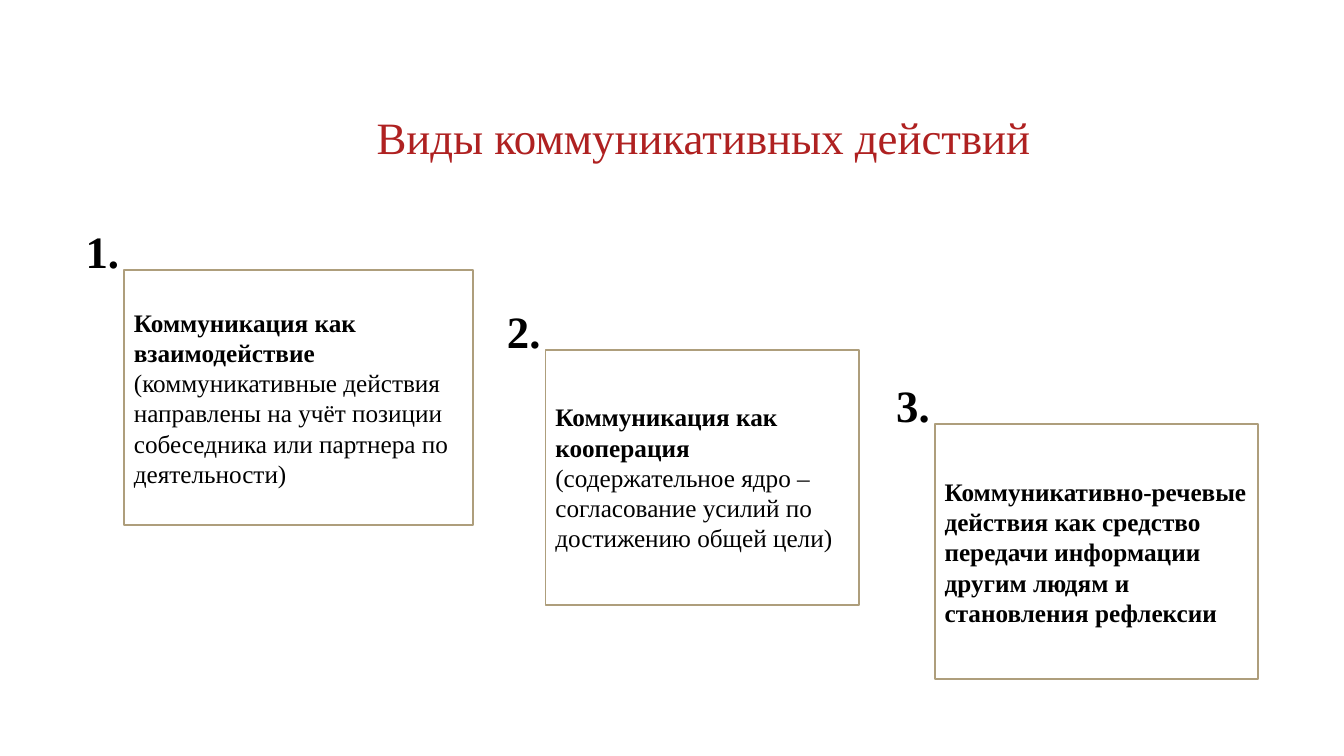
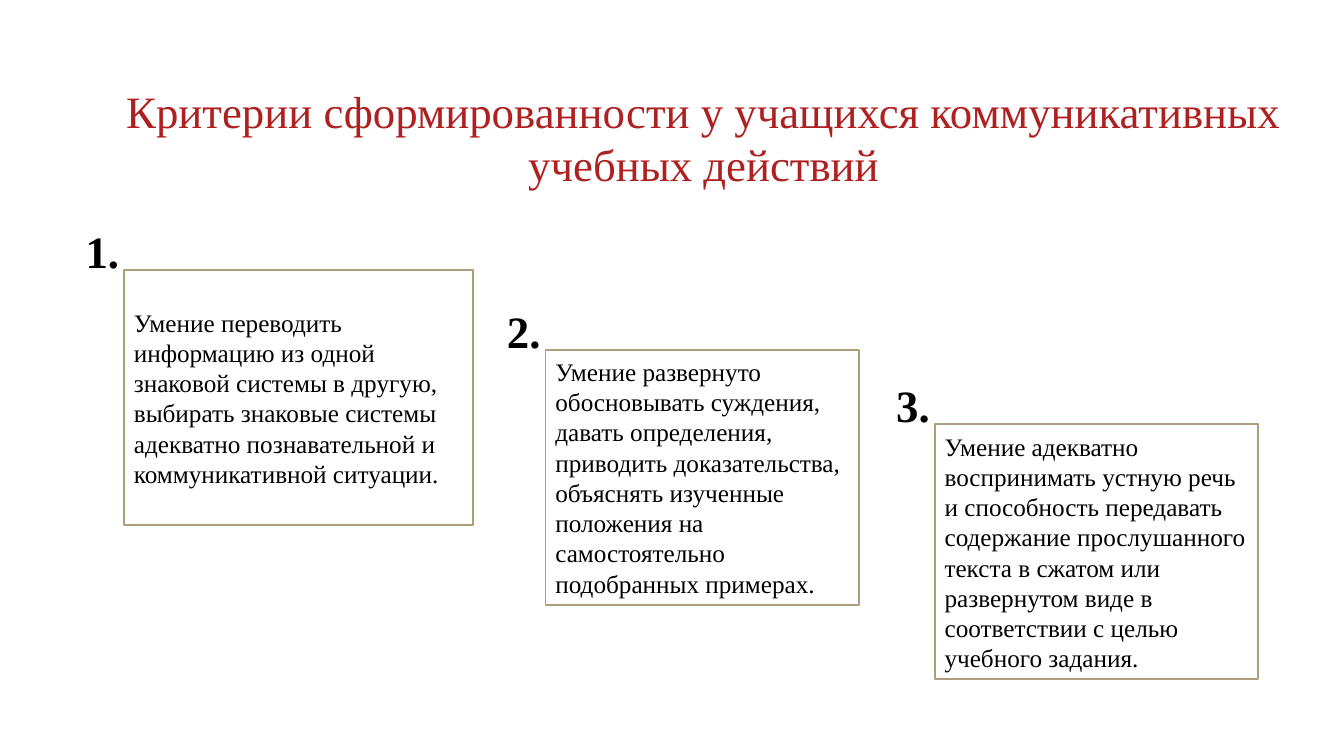
from pptx import Presentation
from pptx.dml.color import RGBColor
from pptx.enum.shapes import MSO_SHAPE
from pptx.enum.text import MSO_ANCHOR, MSO_AUTO_SIZE, PP_ALIGN
from pptx.util import Emu, Pt

RECTANGLE = MSO_SHAPE.RECTANGLE
TOP, MIDDLE = MSO_ANCHOR.TOP, MSO_ANCHOR.MIDDLE
LEFT, CENTER = PP_ALIGN.LEFT, PP_ALIGN.CENTER
NO_AUTOFIT = MSO_AUTO_SIZE.NONE

WHITE = RGBColor(0xFF, 0xFF, 0xFF)
BLACK = RGBColor(0x00, 0x00, 0x00)
RED = RGBColor(0xAF, 0x21, 0x21)
SAND = RGBColor(0xAE, 0x9E, 0x7C)

PX = 9144  # 100 px to the inch
FONT = "Times New Roman"
TITLE_FORMAT = {"name": FONT, "size": Pt(32), "bold": False, "color": RED}
NUMBER_FORMAT = {"name": FONT, "size": Pt(32), "bold": True, "color": BLACK}
PLAIN_FORMAT = {"name": FONT, "size": Pt(18), "bold": False, "color": BLACK}
BOLD_FORMAT = {**PLAIN_FORMAT, "bold": True}

TITLE_BOX = (115, 76, 1166, 120)
CARD_HEIGHT = 253
CARD_BOXES = [
    (123, 268, 346, CARD_HEIGHT),
    (541, 347, 311, CARD_HEIGHT),
    (927, 421, 321, CARD_HEIGHT),
]
NUMBER_OFFSET = (48, 51)
NUMBER_SIZE = (323, 225)

# Each card is a list of paragraphs, each paragraph a list of (text, format).
PAGES = [
    ("Виды коммуникативных действий", [
        [[("Коммуникация как взаимодействие ", BOLD_FORMAT),
          ("(коммуникативные действия направлены на учёт позиции собеседника "
           "или партнера по деятельности)", PLAIN_FORMAT)]],
        [[("Коммуникация как кооперация", BOLD_FORMAT)],
         [("(содержательное ядро – согласование усилий по достижению общей цели)",
           PLAIN_FORMAT)]],
        [[("Коммуникативно-речевые действия как средство передачи информации "
           "другим людям и становления рефлексии", BOLD_FORMAT)]],
    ]),
    ("Критерии сформированности у учащихся коммуникативных учебных действий", [
        [[("Умение переводить информацию из одной знаковой системы в другую, "
           "выбирать знаковые системы адекватно познавательной и "
           "коммуникативной ситуации.", PLAIN_FORMAT)]],
        [[("Умение развернуто обосновывать суждения, давать определения, "
           "приводить доказательства, объяснять изученные положения на "
           "самостоятельно подобранных примерах.", PLAIN_FORMAT)]],
        [[("Умение адекватно воспринимать устную речь и способность передавать "
           "содержание прослушанного текста в сжатом или развернутом виде в "
           "соответствии с целью учебного задания.", PLAIN_FORMAT)]],
    ]),
]


def px(*lengths):
    return [Emu(length * PX) for length in lengths]


def write_text(shape, paragraphs, anchor, align):
    frame = shape.text_frame
    frame.word_wrap = True
    frame.auto_size = NO_AUTOFIT
    frame.vertical_anchor = anchor
    for index, spans in enumerate(paragraphs):
        para = frame.add_paragraph() if index else frame.paragraphs[0]
        para.alignment = align
        for text, text_format in spans:
            span = para.add_run()
            span.text = text
            for key, value in text_format.items():
                if key == "color":
                    span.font.color.rgb = value
                else:
                    setattr(span.font, key, value)


def add_title(page, text, box):
    title = page.shapes.title
    title.left, title.top, title.width, title.height = px(*box)
    write_text(title, [[(text, TITLE_FORMAT)]], MIDDLE, CENTER)


def add_white_box(page, box):
    shape = page.shapes.add_shape(RECTANGLE, *px(*box))
    shape.shadow.inherit = False
    shape.fill.solid()
    shape.fill.fore_color.rgb = WHITE
    shape.line.fill.background()
    return shape


def add_numbered_card(page, number, paragraphs, box):
    """Place a card over a number that shows above its top left corner."""
    left, top = (edge - shift for edge, shift in zip(box, NUMBER_OFFSET))
    number_box = add_white_box(page, (left, top, *NUMBER_SIZE))
    write_text(number_box, [[(f"{number}.", NUMBER_FORMAT)]], TOP, LEFT)

    card = add_white_box(page, box)
    card.line.color.rgb = SAND
    card.line.width = Pt(1.25)
    write_text(card, paragraphs, MIDDLE, LEFT)


def add_cards_page(deck, title, cards):
    page = deck.slides.add_slide(deck.slide_layouts.get_by_name("Title Only"))
    add_title(page, title, TITLE_BOX)
    for number, (paragraphs, box) in enumerate(zip(cards, CARD_BOXES), start=1):
        add_numbered_card(page, number, paragraphs, box)


def main():
    deck = Presentation()
    deck.slide_width, deck.slide_height = px(1333, 750)
    for title, cards in PAGES:
        add_cards_page(deck, title, cards)
    deck.save("out.pptx")


if __name__ == "__main__":
    main()
